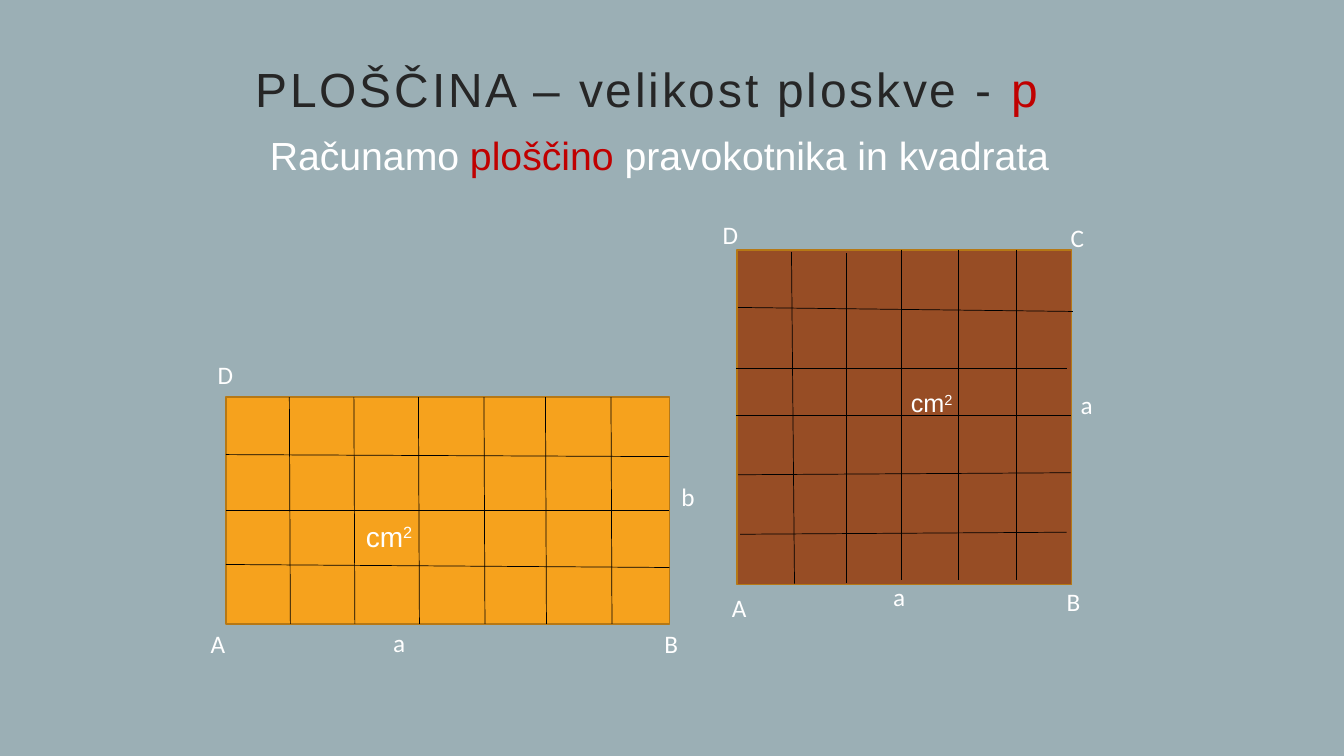
from lxml.etree import SubElement
from pptx import Presentation
from pptx.dml.color import RGBColor
from pptx.enum.shapes import MSO_CONNECTOR, MSO_SHAPE
from pptx.enum.text import MSO_ANCHOR, PP_ALIGN
from pptx.oxml.ns import qn
from pptx.util import Inches, Pt

WHITE, RED, DARK, EDGE = "FFFFFF", "C00000", "262626", "B67815"

TITLE = [("PLOŠČINA – velikost ploskve - ", DARK), ("p", RED)]
SUBTITLE = [("Računamo ", WHITE), ("ploščino", RED),
            (" pravokotnika in kvadrata", WHITE)]
UNIT = [("cm", WHITE), ("2", WHITE, 30)]  # third item: superscript rise in percent

RECTANGLE = (2.24, 3.94, 4.4, 2.25)
SQUARE = (7.31, 2.48, 3.32, 3.32)

# Hand-drawn rules of the rectangle: height at its left and right edge
RECTANGLE_ROWS = [(4.51, 4.53), (5.06, 5.06), (5.6, 5.63)]
RECTANGLE_COLUMNS = [2.87, 3.51, 4.15, 4.8, 5.41, 6.06]
COLUMN_LEAN = 0.01

# Hand-drawn rules of the square: x and y of the start, x and y of the end
SQUARE_LINES = [
    (7.34, 5.3, 10.58, 5.28), (7.32, 4.71, 10.62, 4.69),
    (7.3, 4.12, 10.62, 4.12), (7.3, 3.65, 10.58, 3.65),
    (7.32, 3.05, 10.64, 3.09), (7.85, 2.5, 7.88, 5.79),
    (8.39, 2.51, 8.39, 5.78),
] + [(x, 2.48, x, 5.75) for x in (8.94, 9.51, 10.08)]

LABELS = [
    ("A", 1.99, 6.18), ("B", 6.49, 6.18), ("D", 2.06, 3.52),
    ("a", 3.8, 6.17), ("b", 6.66, 4.73),
    ("A", 7.16, 5.83), ("B", 10.48, 5.77), ("C", 10.52, 2.16), ("D", 7.07, 2.13),
    ("a", 8.76, 5.72), ("a", 10.62, 3.81),
]
LABEL_SIZE = (0.66, 0.4)


def color(value):
    return RGBColor.from_string(value)


def write(shape, runs, size=18, font="Arial", align=PP_ALIGN.LEFT,
          anchor=MSO_ANCHOR.TOP, insets=(0.1, 0.05, 0.1, 0.05),
          tracking=0, line_spacing=1.0):
    frame = shape.text_frame
    frame.word_wrap = True
    frame.vertical_anchor = anchor
    (frame.margin_left, frame.margin_top,
     frame.margin_right, frame.margin_bottom) = map(Inches, insets)
    paragraph = frame.paragraphs[0]
    paragraph.alignment = align
    paragraph.line_spacing = line_spacing
    for text, fill, *rise in runs:
        run = paragraph.add_run()
        run.text = text
        run.font.size = Pt(size)
        run.font.name = font
        run.font.color.rgb = color(fill)
        properties = run.font._element
        if tracking:
            properties.set("spc", str(tracking * 100))
        if rise:
            properties.set("baseline", str(rise[0] * 1000))


def add_text(slide, box, runs, **style):
    write(slide.shapes.add_textbox(*map(Inches, box)), runs, **style)


def add_area(slide, box, fill):
    area = slide.shapes.add_shape(MSO_SHAPE.RECTANGLE, *map(Inches, box))
    area.shadow.inherit = False
    area.fill.solid()
    area.fill.fore_color.rgb = color(fill)
    area.line.color.rgb = color(EDGE)
    area.line.width = Pt(1)
    return area


def add_lines(slide, lines):
    for ends in lines:
        line = slide.shapes.add_connector(MSO_CONNECTOR.STRAIGHT, *map(Inches, ends))
        line.line.color.rgb = color("000000")
        line.line.width = Pt(0.5)
        SubElement(line._element.spPr, qn("a:effectLst"))


def main():
    presentation = Presentation()
    presentation.slide_width = Inches(13.33)
    presentation.slide_height = Inches(7.5)
    slide = presentation.slides.add_slide(presentation.slide_layouts[6])
    slide.background.fill.solid()
    slide.background.fill.fore_color.rgb = color("9BAFB5")

    add_text(slide, (1.5, 0.43, 9.83, 0.96), TITLE, size=34.2, tracking=2,
             align=PP_ALIGN.CENTER, anchor=MSO_ANCHOR.MIDDLE,
             insets=(0.3, 0.2, 0.3, 0.2), line_spacing=0.9)
    add_text(slide, (2.06, 1.25, 8.96, 0.6), SUBTITLE, size=28,
             align=PP_ALIGN.CENTER)

    left, top, width, height = RECTANGLE
    right, bottom = left + width, top + height
    add_area(slide, RECTANGLE, "F6A21D")
    add_lines(slide, [(left, start, right, end) for start, end in RECTANGLE_ROWS])
    add_lines(slide, [(x, top, x + COLUMN_LEAN, bottom) for x in RECTANGLE_COLUMNS])
    add_text(slide, (3.53, 5.1, 2.14, 0.44), UNIT, size=20)

    square = add_area(slide, SQUARE, "974D25")
    write(square, UNIT, align=PP_ALIGN.CENTER, anchor=MSO_ANCHOR.MIDDLE,
          insets=(0.64, 0.05, 0.1, 0.34))
    add_lines(slide, SQUARE_LINES)

    for text, x, y in LABELS:
        add_text(slide, (x, y, *LABEL_SIZE), [(text, WHITE)], font="Calibri")

    presentation.save("out.pptx")


if __name__ == "__main__":
    main()
